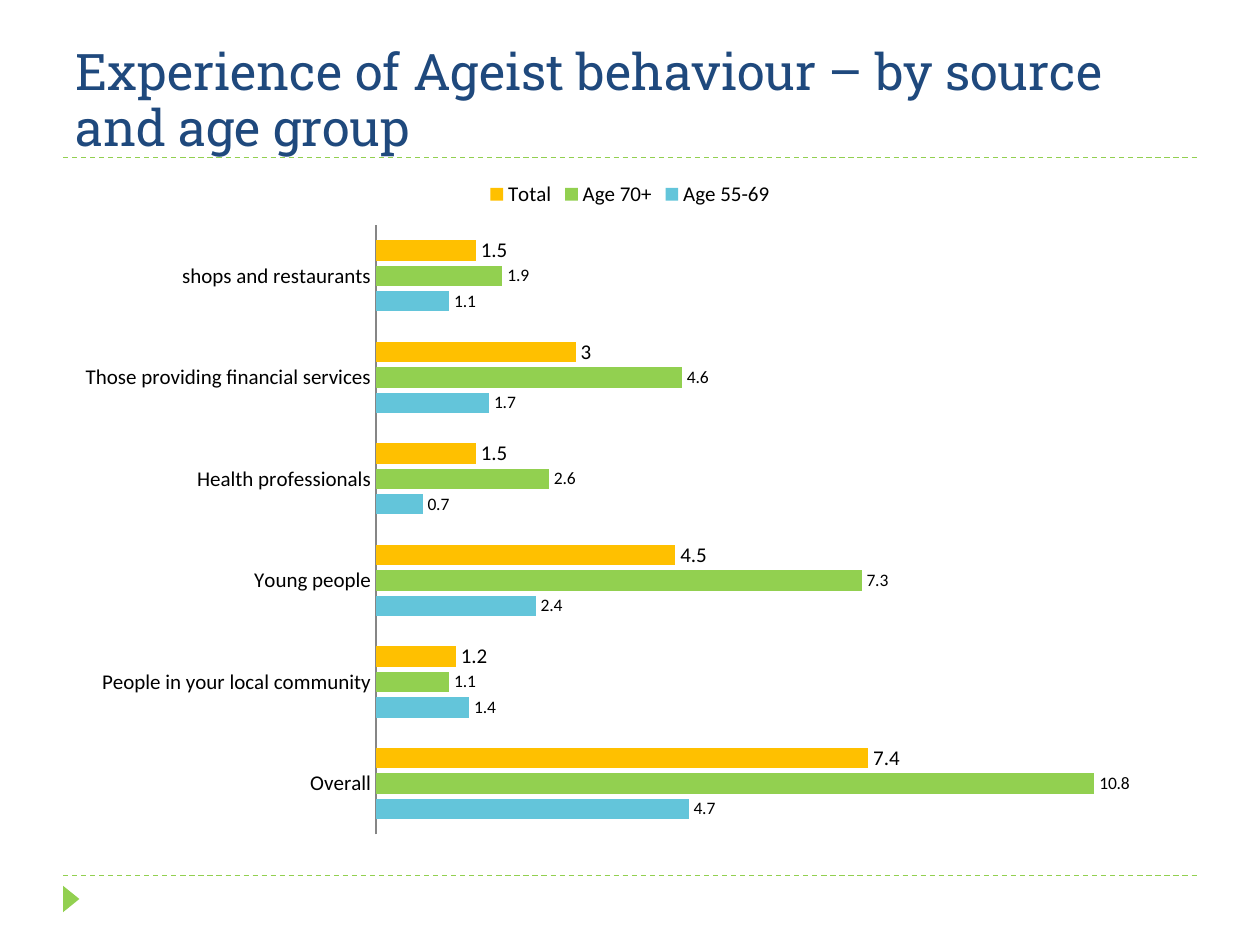
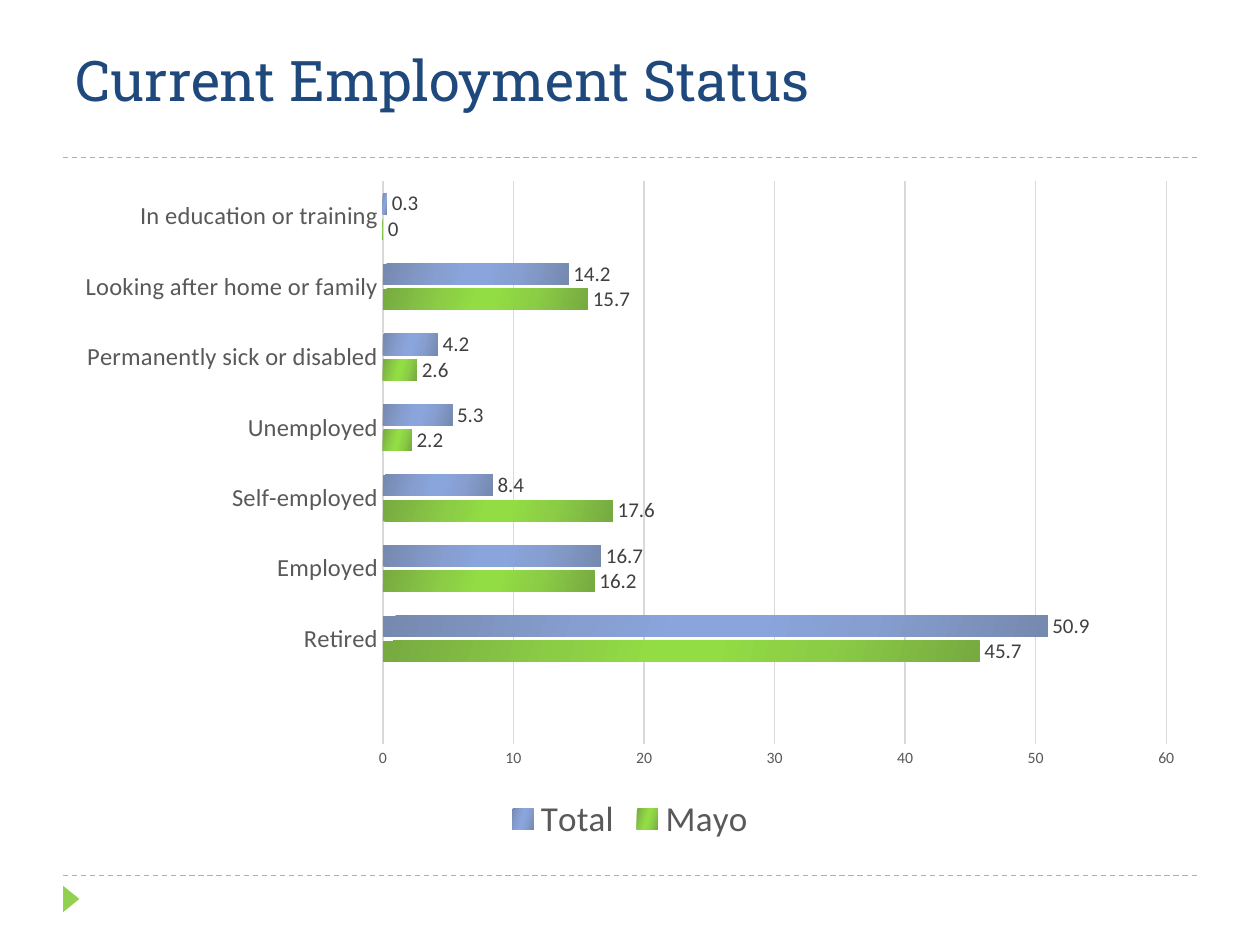
from lxml import etree
from pptx import Presentation
from pptx.chart.data import CategoryChartData
from pptx.dml.color import RGBColor
from pptx.enum.chart import XL_CHART_TYPE, XL_LABEL_POSITION, XL_LEGEND_POSITION, XL_TICK_MARK
from pptx.enum.dml import MSO_LINE
from pptx.enum.shapes import MSO_CONNECTOR, MSO_SHAPE
from pptx.enum.text import MSO_ANCHOR, MSO_AUTO_SIZE
from pptx.oxml.ns import qn
from pptx.util import Inches, Pt

BARS = XL_CHART_TYPE.BAR_CLUSTERED
OUTER = XL_LABEL_POSITION.OUTSIDE_END
TOP, BOTTOM = XL_LEGEND_POSITION.TOP, XL_LEGEND_POSITION.BOTTOM
NO_TICK = XL_TICK_MARK.NONE
DASH = MSO_LINE.DASH
STRAIGHT = MSO_CONNECTOR.STRAIGHT
ARROW = MSO_SHAPE.ISOSCELES_TRIANGLE
LOW, MIDDLE = MSO_ANCHOR.BOTTOM, MSO_ANCHOR.MIDDLE
FIXED = MSO_AUTO_SIZE.NONE

GREEN, NAVY, BLACK = "92D050", "1F497D", "000000"
GREY, DARK, PALE = "595959", "404040", "D9D9D9"
STOPS = (0, 30, 45, 55, 73, 100)


def rgb(code):
    return RGBColor.from_string(code)


class Deck:
    head = "Roboto Slab"
    body = "Calibri"

    def __init__(self):
        self.prs = Presentation()
        self.prs.slide_width, self.prs.slide_height = Inches(10), Inches(7.5)

    def page(self, text, size, height, anchor):
        self.slide = self.prs.slides.add_slide(self.prs.slide_layouts[5])
        for y in (6.95, 1.25):
            self.rule(y)
        self.mark()
        self.title(text, size, height, anchor)

    def rule(self, y):
        line = self.slide.shapes.add_connector(
            STRAIGHT, Inches(0.5), Inches(y), Inches(9.5), Inches(y))
        self.stroke(line.line, GREEN, 0.75)
        line.line.dash_style = DASH
        etree.SubElement(line._element.spPr, qn("a:effectLst"))

    def mark(self):
        shape = self.slide.shapes.add_shape(
            ARROW, Inches(0.46), Inches(7.07), Inches(0.21), Inches(0.13))
        shape.rotation = 90
        shape.shadow.inherit = False
        shape.fill.solid()
        shape.fill.fore_color.rgb = rgb(GREEN)
        shape.line.fill.background()

    def title(self, text, size, height, anchor):
        box = self.slide.shapes.title
        box.left, box.top = Inches(0.5), Inches(0.17)
        box.width, box.height = Inches(9), Inches(height)
        frame = box.text_frame
        frame.text = text
        frame.auto_size = FIXED
        frame.vertical_anchor = anchor
        if anchor == LOW:
            frame.margin_bottom = 0
        para = frame.paragraphs[0]
        para.alignment = 1
        if anchor == LOW:
            para.line_spacing = 0.92
        self.style(para.font, size, NAVY, self.head)

    def style(self, font, size, color, name=None):
        font.size = Pt(size)
        font.name = name or self.body
        font.color.rgb = rgb(color)

    def stroke(self, line, color, width):
        line.color.rgb = rgb(color)
        line.width = Pt(width)

    def paint(self, fill, color):
        if isinstance(color, str):
            fill.solid()
            fill.fore_color.rgb = rgb(color)
            return
        fill.gradient()
        fill.gradient_angle = 344
        stops = fill._fill._gradFill.find(qn("a:gsLst"))
        for stop in list(stops):
            stops.remove(stop)
        for pos, code in zip(STOPS, color + color[::-1]):
            stop = etree.SubElement(stops, qn("a:gs"), pos=str(pos * 1000))
            etree.SubElement(stop, qn("a:srgbClr"), val=code)

    def chart(self, cats, rows, gap, overlap, top, step):
        data = CategoryChartData()
        data.categories = cats
        for name, _, _, _, vals in rows:
            data.add_series(name, vals)
        chart = self.slide.shapes.add_chart(
            BARS, Inches(0.5), Inches(1.33), Inches(9), Inches(5.4), data).chart
        chart.has_title = False
        self.style(chart.font, 10, BLACK)
        plot = chart.plots[0]
        plot.gap_width, plot.overlap = gap, overlap
        plot.vary_by_categories = False
        for series, (_, color, size, ink, _) in zip(plot.series, rows):
            self.paint(series.format.fill, color)
            labels = series.data_labels
            labels.show_value = True
            labels.position = OUTER
            self.style(labels.font, size, ink)
        axis = chart.value_axis
        axis.minimum_scale, axis.maximum_scale, axis.major_unit = 0, top, step
        return chart

    def names(self, chart, size, color, line, width):
        axis = chart.category_axis
        axis.major_tick_mark = NO_TICK
        self.style(axis.tick_labels.font, size, color)
        self.stroke(axis.format.line, line, width)

    def scale(self, chart, size, color, line):
        axis = chart.value_axis
        axis.major_tick_mark = NO_TICK
        axis.format.line.fill.background()
        self.style(axis.tick_labels.font, size, color)
        self.stroke(axis.major_gridlines.format.line, line, 0.75)

    def hide(self, chart):
        chart.value_axis.has_major_gridlines = False
        chart.value_axis.visible = False

    def legend(self, chart, place, size, color):
        chart.has_legend = True
        chart.legend.position = place
        chart.legend.include_in_layout = False
        self.style(chart.legend.font, size, color)


def ageism(deck):
    deck.page("Experience of Ageist behaviour – by source and age group",
              28.8, 1.08, LOW)
    cats = ["Overall", "People in your local community", "Young people",
            "Health professionals", "Those providing financial services",
            "shops and restaurants"]
    rows = [
        ("Age 55-69", "63C5DA", 10, BLACK, [4.7, 1.4, 2.4, 0.7, 1.7, 1.1]),
        ("Age 70+", GREEN, 10, BLACK, [10.8, 1.1, 7.3, 2.6, 4.6, 1.9]),
        ("Total", "FFC000", 12, BLACK, [7.4, 1.2, 4.5, 1.5, 3, 1.5]),
    ]
    chart = deck.chart(cats, rows, 150, -25, 12, 2)
    deck.names(chart, 12, BLACK, "868686", 0.75)
    deck.hide(chart)
    deck.legend(chart, TOP, 12, BLACK)


def work(deck):
    deck.page("Current Employment Status", 32, 0.91, MIDDLE)
    cats = ["", "Retired", "Employed", "Self-employed", "Unemployed",
            "Permanently sick or disabled", "Looking after home or family",
            "In education or training"]
    rows = [
        ("Mayo", ("77AA41", "8CCD46", "92DC44"), 12, DARK,
         [None, 45.7, 16.2, 17.6, 2.2, 2.6, 15.7, 0]),
        ("Total", ("7689AF", "869ED0", "8AA5DC"), 12, DARK,
         [None, 50.9, 16.7, 8.4, 5.3, 4.2, 14.2, 0.3]),
    ]
    chart = deck.chart(cats, rows, 115, -20, 60, 10)
    deck.names(chart, 14, GREY, PALE, 1)
    deck.scale(chart, 9, GREY, PALE)
    deck.legend(chart, BOTTOM, 20, GREY)


def main():
    deck = Deck()
    ageism(deck)
    work(deck)
    deck.prs.save("out.pptx")


if __name__ == "__main__":
    main()
